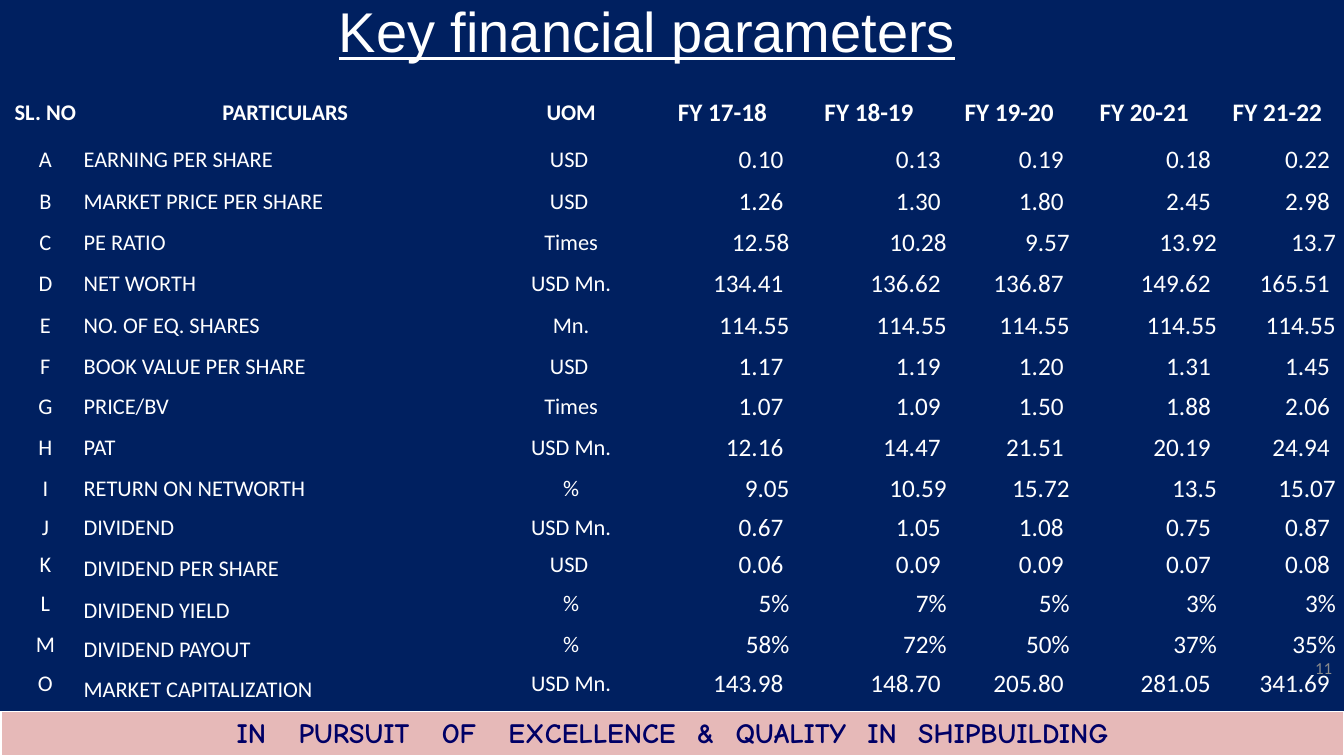
from dataclasses import dataclass

from lxml import etree
from pptx import Presentation
from pptx.dml.color import RGBColor
from pptx.enum.text import MSO_ANCHOR, PP_ALIGN
from pptx.oxml.ns import qn
from pptx.util import Pt

LEFT, CENTER, RIGHT = PP_ALIGN.LEFT, PP_ALIGN.CENTER, PP_ALIGN.RIGHT
TOP, MIDDLE, BOTTOM = MSO_ANCHOR.TOP, MSO_ANCHOR.MIDDLE, MSO_ANCHOR.BOTTOM
PX = 9144
PLAIN_TABLE = "{2D5ABB26-0587-4C30-8999-92F81FD0307C}"
CELL_INSET = 1
FIGURE_INSET = 7


@dataclass(frozen=True)
class Theme:
    navy: str = "002060"
    white: str = "FFFFFF"
    grey: str = "8C8C8C"
    pink: str = "E6B9B8"
    ink: str = "000066"
    body_face: str = "Calibri"
    title_face: str = "Arial"
    motto_face: str = "Comic Neue"
    title_size: int = 40
    motto_size: int = 20
    figure_size: int = 18
    label_size: int = 16
    number_size: int = 12


THEME = Theme()

COLUMNS = [74, 402, 165, 135, 156, 122, 146, 118]
ROWS = [54] + [41] * 6 + [39, 41, 41, 37, 36, 42, 39, 39]
HEADINGS = ["SL. NO", "PARTICULARS", "UOM",
            "FY 17-18", "FY 18-19", "FY 19-20", "FY 20-21", "FY 21-22"]
PARAMETERS = [
    ("A", "EARNING PER SHARE", "USD", "0.10 0.13 0.19 0.18 0.22"),
    ("B", "MARKET PRICE PER SHARE", "USD", "1.26 1.30 1.80 2.45 2.98"),
    ("C", "PE RATIO", "Times", "12.58 10.28 9.57 13.92 13.7"),
    ("D", "NET WORTH", "USD Mn.", "134.41 136.62 136.87 149.62 165.51"),
    ("E", "NO. OF EQ. SHARES", "Mn.", "114.55 114.55 114.55 114.55 114.55"),
    ("F", "BOOK VALUE PER SHARE", "USD", "1.17 1.19 1.20 1.31 1.45"),
    ("G", "PRICE/BV", "Times", "1.07 1.09 1.50 1.88 2.06"),
    ("H", "PAT", "USD Mn.", "12.16 14.47 21.51 20.19 24.94"),
    ("I", "RETURN ON NETWORTH", "%", "9.05 10.59 15.72 13.5 15.07"),
    ("J", "DIVIDEND", "USD Mn.", "0.67 1.05 1.08 0.75 0.87"),
    ("K", "DIVIDEND PER SHARE", "USD", "0.06 0.09 0.09 0.07 0.08"),
    ("L", "DIVIDEND YIELD", "%", "5% 7% 5% 3% 3%"),
    ("M", "DIVIDEND PAYOUT", "%", "58% 72% 50% 37% 35%"),
    ("O", "MARKET CAPITALIZATION", "USD Mn.", "143.98 148.70 205.80 281.05 341.69"),
]
FLUSH_ROWS = "CEILM"
LOW_LABEL_ROWS = "KLMO"
MOTTO = [("IN", 16), ("PURSUIT", 16), ("OF", 16), ("EXCELLENCE", 8),
         ("&", 8), ("QUALITY", 8), ("IN", 8), ("SHIPBUILDING", 0)]


def style(para, face, size, color, align, bold=False, underline=False):
    para.alignment = align
    font = para.font
    font.name, font.size = face, Pt(size)
    font.bold, font.underline = bold, underline
    font.color.rgb = RGBColor.from_string(color)


def add_text(page, frame, text, anchor, **look):
    box = page.shapes.add_textbox(*(length * PX for length in frame))
    box.text_frame.word_wrap = True
    box.text_frame.vertical_anchor = anchor
    para = box.text_frame.paragraphs[0]
    para.text = text
    style(para, **look)


def add_plain_table(page, left, top, columns, rows):
    frame = page.shapes.add_table(
        len(rows), len(columns), left * PX, top * PX,
        sum(columns) * PX, sum(rows) * PX)
    table = frame.table
    table.first_row = table.horz_banding = False
    table._tbl.tblPr.find(qn("a:tableStyleId")).text = PLAIN_TABLE
    for column, width in zip(table.columns, columns):
        column.width = width * PX
    for row, height in zip(table.rows, rows):
        row.height = height * PX
    return table


def prepare_cell(cell, anchor=MIDDLE, right=CELL_INSET):
    cell.margin_left = cell.margin_top = CELL_INSET * PX
    cell.margin_right = right * PX
    cell.margin_bottom = 0
    cell.vertical_anchor = anchor
    cell.fill.background()
    return cell.text_frame.paragraphs[0]


def outline_cell(cell, color, points):
    props = cell._tc.get_or_add_tcPr()
    for index, side in enumerate(("a:lnL", "a:lnR", "a:lnT", "a:lnB")):
        line = etree.Element(qn(side), w=str(Pt(points)))
        fill = etree.SubElement(line, qn("a:solidFill"))
        etree.SubElement(fill, qn("a:srgbClr"), val=color)
        props.insert(index, line)


def add_motto(page):
    table = add_plain_table(page, 1, 706, [1332], [44])
    cell = table.cell(0, 0)
    para = prepare_cell(cell)
    for word, gap in MOTTO:
        para.add_run().text = word
        if gap:
            span = para.add_run()
            span.text = " "
            span._r.get_or_add_rPr().set("spc", str(gap * 100))
    style(para, THEME.motto_face, THEME.motto_size, THEME.ink, CENTER, bold=True)
    cell.fill.solid()
    cell.fill.fore_color.rgb = RGBColor.from_string(THEME.pink)
    outline_cell(cell, THEME.white, 1)


def add_parameters(page):
    table = add_plain_table(page, 8, 84, COLUMNS, ROWS)
    for column, heading in enumerate(HEADINGS):
        para = prepare_cell(table.cell(0, column))
        para.text = heading
        size = THEME.label_size if column < 3 else THEME.figure_size
        style(para, THEME.body_face, size, THEME.white, CENTER, bold=True)
    for row, (letter, label, unit, figures) in enumerate(PARAMETERS, 1):
        label_anchor = BOTTOM if letter in LOW_LABEL_ROWS else MIDDLE
        figure_inset = CELL_INSET if letter in FLUSH_ROWS else FIGURE_INSET
        unit_inset = 5 if unit == "USD" else CELL_INSET
        entries = [
            (letter, CENTER, MIDDLE, CELL_INSET, THEME.label_size),
            (label, LEFT, label_anchor, CELL_INSET, THEME.label_size),
            (unit, CENTER, MIDDLE, unit_inset, THEME.label_size),
        ] + [(figure, RIGHT, MIDDLE, figure_inset, THEME.figure_size)
             for figure in figures.split()]
        for column, (text, align, anchor, inset, size) in enumerate(entries):
            para = prepare_cell(table.cell(row, column), anchor, inset)
            para.text = text
            style(para, THEME.body_face, size, THEME.white, align)


def main():
    deck = Presentation()
    deck.slide_width, deck.slide_height = 1333 * PX, 750 * PX
    page = deck.slides.add_slide(deck.slide_layouts[6])
    page.background.fill.solid()
    page.background.fill.fore_color.rgb = RGBColor.from_string(THEME.navy)
    add_motto(page)
    add_text(page, (1020, 643, 311, 40), "11", MIDDLE, face=THEME.body_face,
             size=THEME.number_size, color=THEME.grey, align=RIGHT)
    add_text(page, (161, -8, 961, 77), "Key financial parameters", TOP,
             face=THEME.title_face, size=THEME.title_size, color=THEME.white,
             align=CENTER, underline=True)
    add_parameters(page)
    deck.save("out.pptx")


if __name__ == "__main__":
    main()
